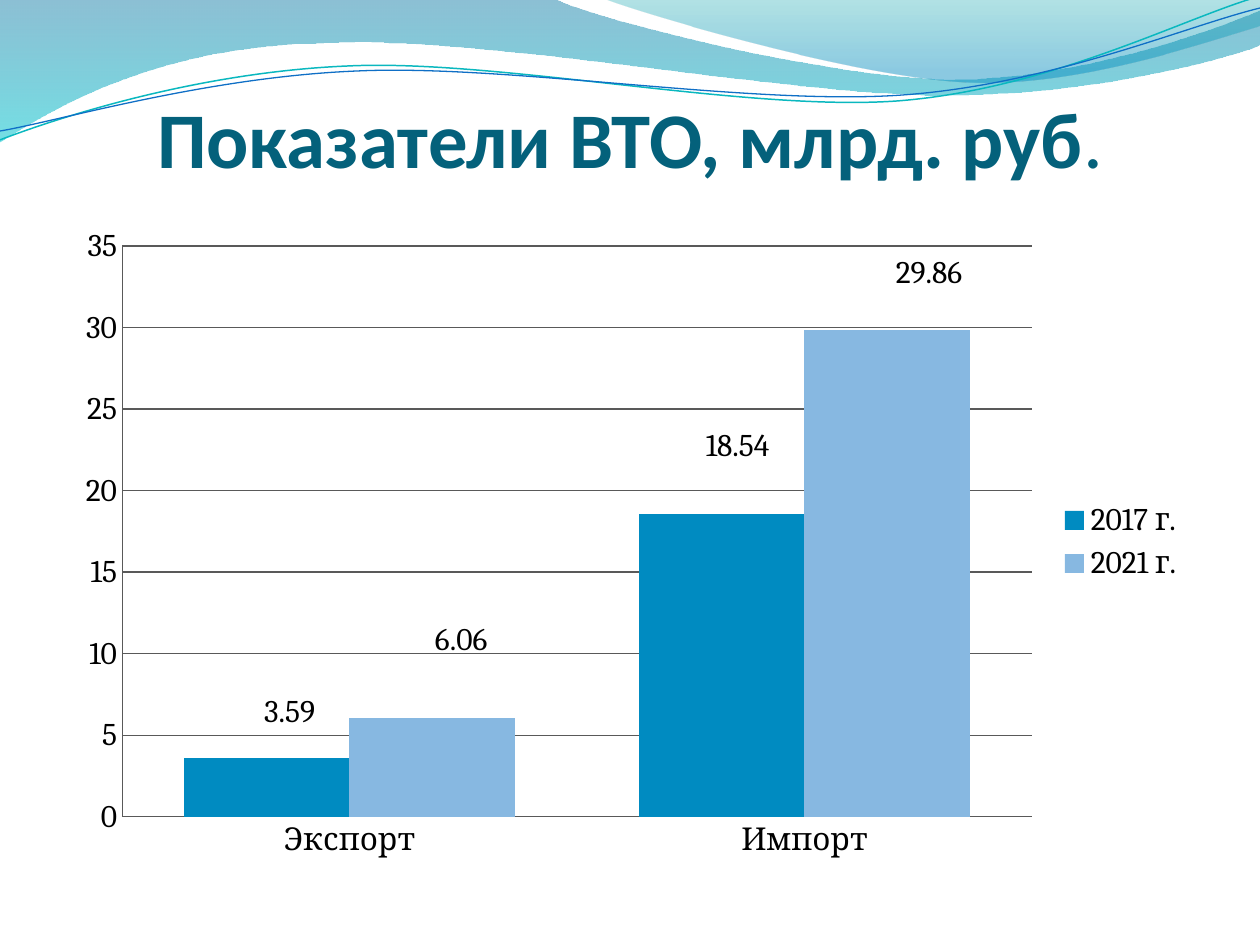
from math import cos, radians, sin

from lxml.etree import SubElement
from pptx import Presentation
from pptx.chart.data import CategoryChartData
from pptx.dml.color import RGBColor
from pptx.enum.chart import XL_CHART_TYPE as ChartType
from pptx.enum.chart import XL_LABEL_POSITION as LabelPosition
from pptx.enum.chart import XL_LEGEND_POSITION as LegendPosition
from pptx.enum.chart import XL_TICK_MARK as TickMark
from pptx.enum.text import MSO_ANCHOR as Anchor
from pptx.enum.text import MSO_AUTO_SIZE as AutoSize
from pptx.enum.text import PP_ALIGN as Align
from pptx.oxml import parse_xml
from pptx.oxml.ns import nsdecls, qn
from pptx.util import Emu, Pt

SCALE = 914400 / 126
LINE_TILT = -2.7

TITLE_BOX = (63, 97, 1134, 87)
TITLE_RUNS = [("Показатели ВТО, млрд. руб", True), (".", False)]

CHART_BOX = (63, 214, 1134, 656)
PLOT_BOX = (122, 246, 910, 571)
CATEGORIES = ["Экспорт", "Импорт"]
SERIES = [
    {"name": "2017 г.", "values": [3.59, 18.54], "color": "008BC1",
     "label_shifts": [(23, -23), (16, -45)]},
    {"name": "2021 г.", "values": [6.06, 29.86], "color": "87B8E1",
     "label_shifts": [(29, -55), (42, -33)]},
]

WAVES = [
    {"start": (0, 0),
     "segments": [(554, -1), (600, 21, 837, 79, 955, 79),
                  (1075, 79, 1207, 33, 1260, 11), (1261, 45),
                  (1239, 55, 1096, 96, 940, 95), (784, 95, 481, 35, 324, 43),
                  (163, 45, 58, 105, -1, 142)],
     "stops": [(0, "0074A1", 45), (1, "00C6CF", 55)]},
    {"start": (604, -1),
     "segments": [(641, 14, 859, 78, 969, 82),
                  (1079, 87, 1211, 40, 1260, 26), (1260, 0)],
     "stops": [(0, "00A1A9", 30), (0.8, "008BBF", 45)]},
    {"start": (0, 140), "center": (629, 72),
     "segments": [(60, 117, 199, 72, 349, 66), (498, 59, 747, 112, 898, 101),
                  (1050, 89, 1182, 19, 1257, -3)],
     "line": ("0AB8BF", 0.85)},
    {"start": (0, 131), "center": (629, 75),
     "segments": [(59, 121, 207, 77, 357, 71), (508, 64, 752, 106, 903, 95),
                  (1053, 84, 1186, 26, 1260, 8)],
     "line": ("0F6FC6", 0.75)},
]


def px(length):
    return Emu(round(length * SCALE))


def rgb(color):
    return RGBColor.from_string(color)


def add_text(paragraph, text, font="Calibri", size=45, color="04617B", bold=False):
    run = paragraph.add_run()
    run.text = text
    run.font.name = font
    run.font.size = Pt(size)
    run.font.color.rgb = rgb(color)
    run.font.bold = bold


def turn(point, center, degrees):
    angle = radians(degrees)
    x, y = point[0] - center[0], point[1] - center[1]
    return (center[0] + x * cos(angle) - y * sin(angle),
            center[1] + x * sin(angle) + y * cos(angle))


def bend_segments(shape, segments):
    lines = list(shape._element.iter(qn("a:lnTo")))
    for segment in segments:
        count = len(segment) // 2
        group, lines = lines[:count], lines[count:]
        if count == 3:
            outline = group[0].getparent()
            curve = parse_xml(f'<a:cubicBezTo {nsdecls("a")}/>')
            outline.insert(outline.index(group[0]), curve)
            for line in group:
                curve.append(line[0])
                outline.remove(line)


def add_wave(slide, wave):
    filled = "stops" in wave
    points = [wave["start"]]
    for segment in wave["segments"]:
        points += zip(segment[::2], segment[1::2])
    if not filled:
        points = [turn(point, wave["center"], -LINE_TILT) for point in points]
    first, *others = [(px(x), px(y)) for x, y in points]
    builder = slide.shapes.build_freeform(*first)
    builder.add_line_segments(others, close=filled)
    shape = builder.convert_to_shape()
    bend_segments(shape, wave["segments"])
    shape.shadow.inherit = False
    if filled:
        shape.line.fill.background()
        shape.fill.gradient()
        shape.fill.gradient_angle = 270
        for stop, (position, color, opacity) in zip(shape.fill.gradient_stops, wave["stops"]):
            stop.position = position
            stop.color.rgb = rgb(color)
        colors = shape._element.spPr.iter(qn("a:srgbClr"))
        for element, (position, color, opacity) in zip(colors, wave["stops"]):
            SubElement(element, qn("a:alpha"), val=str(opacity * 1000))
    else:
        color, width = wave["line"]
        shape.rotation = LINE_TILT
        shape.fill.background()
        shape.line.color.rgb = rgb(color)
        shape.line.width = Pt(width)


def manual_layout(inner=False, **fractions):
    target = '<c:layoutTarget val="inner"/>' if inner else ""
    modes = '<c:xMode val="edge"/><c:yMode val="edge"/>' if inner else ""
    sizes = "".join(f'<c:{name} val="{value:.4f}"/>' for name, value in fractions.items())
    return parse_xml(f'<c:layout {nsdecls("c")}><c:manualLayout>{target}{modes}{sizes}'
                     "</c:manualLayout></c:layout>")


def add_chart(slide):
    data = CategoryChartData()
    data.categories = CATEGORIES
    for item in SERIES:
        data.add_series(item["name"], item["values"])
    left, top, width, height = CHART_BOX
    chart = slide.shapes.add_chart(ChartType.COLUMN_CLUSTERED, *map(px, CHART_BOX), data).chart
    chart.font.name = "Cambria"
    chart.font.size = Pt(18)
    chart.font.color.rgb = rgb("000000")
    chart.has_title = False
    chart.has_legend = True
    chart.legend.position = LegendPosition.RIGHT
    chart.legend.include_in_layout = False

    value_axis, category_axis = chart.value_axis, chart.category_axis
    value_axis.minimum_scale, value_axis.maximum_scale = 0, 35
    value_axis.major_unit = 5
    value_axis.has_major_gridlines = True
    for axis in (category_axis, value_axis):
        axis.major_tick_mark = axis.minor_tick_mark = TickMark.NONE
    for part, line_width in ((value_axis.major_gridlines, 0.75), (value_axis, 0.5),
                             (category_axis, 0.5)):
        part.format.line.color.rgb = rgb("595959")
        part.format.line.width = Pt(line_width)

    plot = chart.plots[0]
    plot.gap_width = 75
    plot.overlap = 0
    plot.vary_by_categories = False
    for series, item in zip(plot.series, SERIES):
        series.format.fill.solid()
        series.format.fill.fore_color.rgb = rgb(item["color"])
        series.data_labels.show_value = True
        for index in range(len(CATEGORIES)):
            label = series.points[index].data_label
            label.font.size = Pt(18)
            label.position = LabelPosition.OUTSIDE_END
        labels = series._element.iter(qn("c:dLbl"))
        for element, (shift_x, shift_y) in zip(labels, item["label_shifts"]):
            element.insert(1, manual_layout(x=shift_x / width, y=shift_y / height))
        for leader in series._element.iter(qn("c:showLeaderLines")):
            leader.set("val", "0")

    plot_area = chart._chartSpace.chart.plotArea
    for layout in plot_area.findall(qn("c:layout")):
        plot_area.remove(layout)
    plot_left, plot_top, plot_width, plot_height = PLOT_BOX
    plot_area.insert(0, manual_layout(
        inner=True, x=(plot_left - left) / width, y=(plot_top - top) / height,
        w=plot_width / width, h=plot_height / height))


def add_title(slide):
    title = slide.shapes.title
    title.left, title.top, title.width, title.height = map(px, TITLE_BOX)
    frame = title.text_frame
    frame.auto_size = AutoSize.NONE
    frame.word_wrap = True
    frame.vertical_anchor = Anchor.BOTTOM
    frame.margin_left = frame.margin_right = frame.margin_bottom = 0
    frame.margin_top = px(6)
    paragraph = frame.paragraphs[0]
    paragraph.alignment = Align.CENTER
    for text, bold in TITLE_RUNS:
        add_text(paragraph, text, bold=bold)


def main():
    presentation = Presentation()
    presentation.slide_width, presentation.slide_height = px(1260), px(945)
    slide = presentation.slides.add_slide(presentation.slide_layouts[5])
    for wave in WAVES:
        add_wave(slide, wave)
    add_title(slide)
    add_chart(slide)
    presentation.save("out.pptx")


if __name__ == "__main__":
    main()
